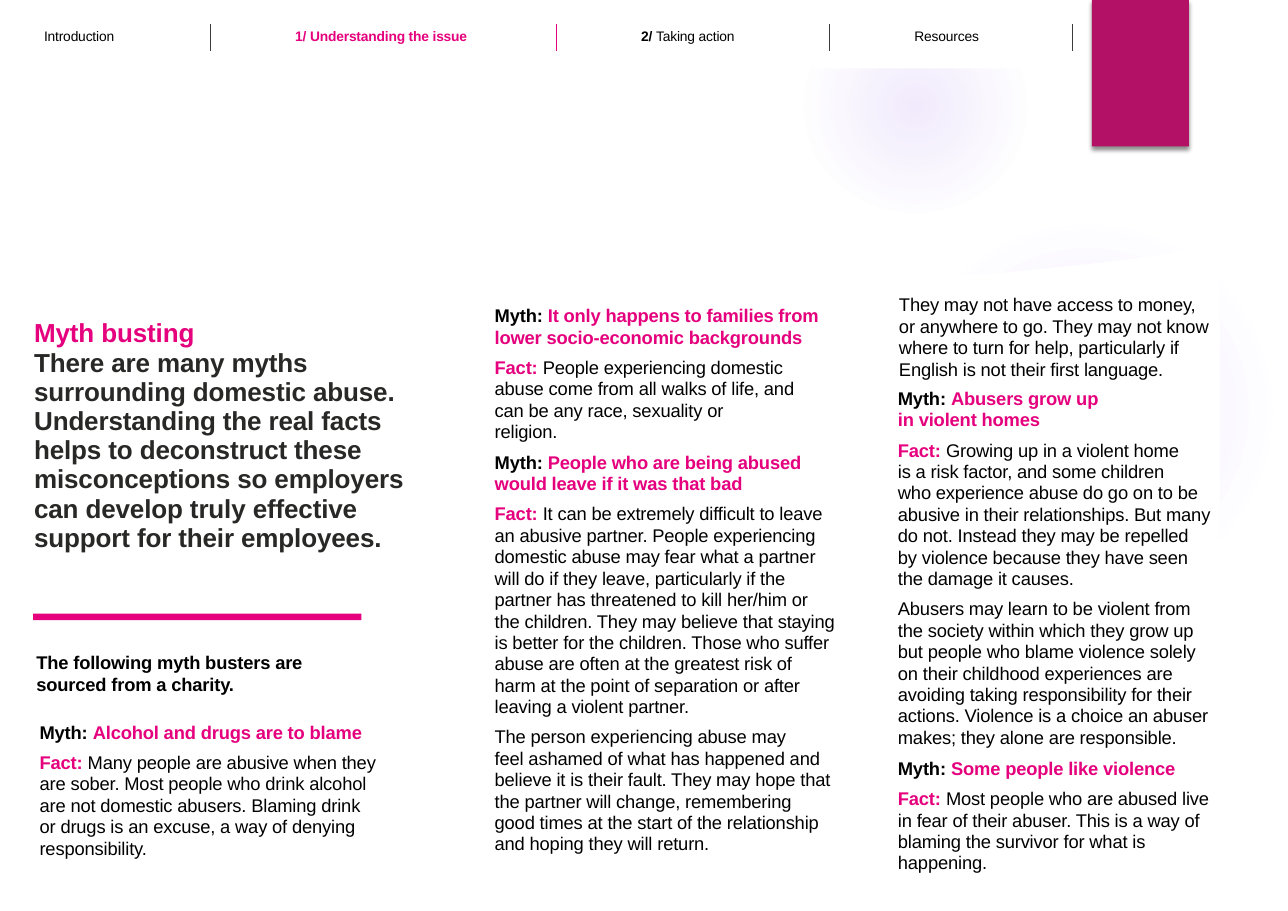
from pptx import Presentation
from pptx import util as u
from pptx.dml.color import RGBColor
from pptx.enum import shapes, text
from pptx.oxml import parse_xml
from pptx.oxml.ns import nsdecls

COLORS = {"pink": "E5007D", "black": "000000", "ink": "282827", "rule": "3C3C3B",
          "tab": "B31166", "glow": "9B6BF2", "white": "FFFFFF"}
STYLES = {"label": ("black", True), "pink": ("pink", True), "body": ("black", False),
          "lead": ("ink", True)}


def myth(words):
    return [("label", "Myth: "), ("pink", words)]


def fact(words):
    return [("pink", "Fact: "), ("body", words)]


NAV = [
    (0.4, [("body", "Introduction")]),
    (2.68, [("pink", "1/ Understanding the issue")]),
    (5.82, [("label", "2/ "), ("body", "Taking action")]),
    (8.3, [("body", "Resources")]),
]
DIVIDERS = [(1.91, "rule"), (5.05, "pink"), (7.53, "rule"), (9.73, "rule")]

INTRO = [
    [("pink", "Myth busting")],
    [("lead", "There are many myths\nsurrounding domestic abuse.\nUnderstanding the real facts\n"
              "helps to deconstruct these\nmisconceptions so employers\n"
              "can develop truly effective\nsupport for their employees.")],
]
SOURCE = [[("label", "The following myth busters are\nsourced from a charity.")]]
ALCOHOL = [
    myth("Alcohol and drugs are to blame"),
    fact("Many people are abusive when they\nare sober. Most people who drink alcohol\n"
         "are not domestic abusers. Blaming drink\nor drugs is an excuse, a way of denying\n"
         "responsibility."),
]
FAMILIES = [
    myth("It only happens to families from\nlower socio-economic backgrounds"),
    fact("People experiencing domestic\nabuse come from all walks of life, and\n"
         "can be any race, sexuality or\nreligion."),
]
LEAVING = [
    myth("People who are being abused\nwould leave if it was that bad"),
    fact("It can be extremely difficult to leave\nan abusive partner. People experiencing\n"
         "domestic abuse may fear what a partner\nwill do if they leave, particularly if the\n"
         "partner has threatened to kill her/him or\n"
         "the children. They may believe that staying\n"
         "is better for the children. Those who suffer\n"
         "abuse are often at the greatest risk of\n"
         "harm at the point of separation or after\nleaving a violent partner."),
    [("body", "The person experiencing abuse may\nfeel ashamed of what has happened and\n"
              "believe it is their fault. They may hope that\n"
              "the partner will change, remembering\n"
              "good times at the start of the relationship\nand hoping they will return.")],
]
MONEY = [[("body", "They may not have access to money,\nor anywhere to go. They may not know\n"
                   "where to turn for help, particularly if\nEnglish is not their first language.")]]
HOMES = [
    myth("Abusers grow up\nin violent homes"),
    fact("Growing up in a violent home\nis a risk factor, and some children\n"
         "who experience abuse do go on to be\nabusive in their relationships. But many\n"
         "do not. Instead they may be repelled\nby violence because they have seen\n"
         "the damage it causes."),
    [("body", "Abusers may learn to be violent from\nthe society within which they grow up\n"
              "but people who blame violence solely\non their childhood experiences are\n"
              "avoiding taking responsibility for their\nactions. Violence is a choice an abuser\n"
              "makes; they alone are responsible.")],
]
VIOLENCE = [
    myth("Some people like violence"),
    fact("Most people who are abused live\nin fear of their abuser. This is a way of\n"
         "blaming the survivor for what is\nhappening."),
]

BLOCKS = [
    (0.31, 2.89, 3.6, 2.2, 17, 19, 1, INTRO),
    (0.33, 5.92, 3.2, 0.4, 12, 14, 6, SOURCE),
    (0.36, 6.55, 3.3, 1.3, 12, 14, 5.7, ALCOHOL),
    (4.49, 2.77, 3.3, 1.25, 12, 14, 5.7, FAMILIES),
    (4.49, 4.1, 3.3, 3.66, 12, 14, 5.7, LEAVING),
    (8.16, 2.67, 3.2, 0.78, 12, 14, 5.7, MONEY),
    (8.15, 3.52, 3.2, 3.28, 12, 14, 5.7, HOMES),
    (8.15, 6.88, 3.2, 1, 12, 14, 5.7, VIOLENCE),
]

GLOWS = [
    ((8.06, 2.02, 3.61, 3.4), [(0, 7), (36, 6), (69, 0), (100, 0)]),
    ((7.28, 0, 2.05, 1.93), [(0, 14), (36, 7), (73, 0), (100, 0)]),
]
PANEL = [(0.62, 2.24), (1.54, 2.35), (2.6, 2.45), (3.59, 2.51), (4.73, 2.56), (5.98, 2.58),
         (7.31, 2.57), (8.24, 2.53), (9.18, 2.47), (10.13, 2.37), (11.07, 2.24),
         (11.07, 7.71), (0.62, 7.71)]

prs = Presentation()
prs.slide_width, prs.slide_height = u.Inches(11.69), u.Inches(8.27)
s = prs.slides.add_slide(prs.slide_layouts[6])


def rgb(name):
    return RGBColor.from_string(COLORS[name])


def paint(sp, color):
    sp.fill.solid()
    sp.fill.fore_color.rgb = rgb(color)
    sp.line.fill.background()
    sp.shadow.inherit = False


def add_rect(box, color):
    sp = s.shapes.add_shape(shapes.MSO_SHAPE.RECTANGLE, *map(u.Inches, box))
    paint(sp, color)
    return sp


def add_glow(box, stops):
    sp = s.shapes.add_shape(shapes.MSO_SHAPE.OVAL, *map(u.Inches, box))
    gs = "".join(f'<a:gs pos="{pos * 1000}"><a:srgbClr val="{COLORS["glow"]}">'
                 f'<a:alpha val="{alpha * 1000}"/></a:srgbClr></a:gs>' for pos, alpha in stops)
    sp._element.spPr.append(parse_xml(
        f'<a:gradFill {nsdecls("a")} rotWithShape="1"><a:gsLst>{gs}</a:gsLst><a:path path="circle">'
        '<a:fillToRect l="50000" t="50000" r="50000" b="50000"/></a:path></a:gradFill>'))
    sp.line.fill.background()
    sp.shadow.inherit = False


def add_text(left, top, width, height, size, leading, gap, paragraphs):
    tf = s.shapes.add_textbox(*map(u.Inches, (left, top, width, height))).text_frame
    tf.word_wrap = True
    tf.vertical_anchor = text.MSO_ANCHOR.TOP
    tf.margin_left = tf.margin_top = tf.margin_right = tf.margin_bottom = 0
    for i, runs in enumerate(paragraphs):
        p = tf.add_paragraph() if i else tf.paragraphs[0]
        p.line_spacing = u.Pt(leading)
        p.space_before = u.Pt(gap if i else 0)
        p.font.name, p.font.size = "Arial", u.Pt(size)
        for style, words in runs:
            color, bold = STYLES[style]
            for n, line in enumerate(words.split("\n")):
                if n:
                    p.add_line_break()
                r = p.add_run()
                r.text = line
                r.font.bold = bold
                r.font.color.rgb = rgb(color)
                r._r.get_or_add_rPr().set("spc", "-10")


for box, stops in GLOWS:
    add_glow(box, stops)

outline = s.shapes.build_freeform(*map(u.Inches, PANEL[0]))
outline.add_line_segments([(u.Inches(x), u.Inches(y)) for x, y in PANEL[1:]])
paint(outline.convert_to_shape(), "white")
add_rect((0, 0, 11.69, 0.62), "white")

tab = add_rect((9.91, 0, 0.88, 1.33), "tab")
tab._element.spPr.effectLst.append(parse_xml(
    f'<a:outerShdw {nsdecls("a")} blurRad="38100" dist="25400" dir="5400000" rotWithShape="0">'
    f'<a:srgbClr val="{COLORS["black"]}"><a:alpha val="45000"/></a:srgbClr></a:outerShdw>'))

for x, color in DIVIDERS:
    rule = s.shapes.add_connector(shapes.MSO_CONNECTOR.STRAIGHT,
                                  *map(u.Inches, (x, 0.22, x, 0.46)))
    rule.line.color.rgb = rgb(color)
    rule.line.width = u.Pt(0.5)
    rule._element.spPr.append(parse_xml(f'<a:effectLst {nsdecls("a")}/>'))

add_rect((0.3, 5.57, 2.98, 0.06), "pink")
for left, runs in NAV:
    add_text(left, 0.26, 2, 0.17, 9, 10.4, 0, [runs])
for block in BLOCKS:
    add_text(*block)

prs.save("out.pptx")
